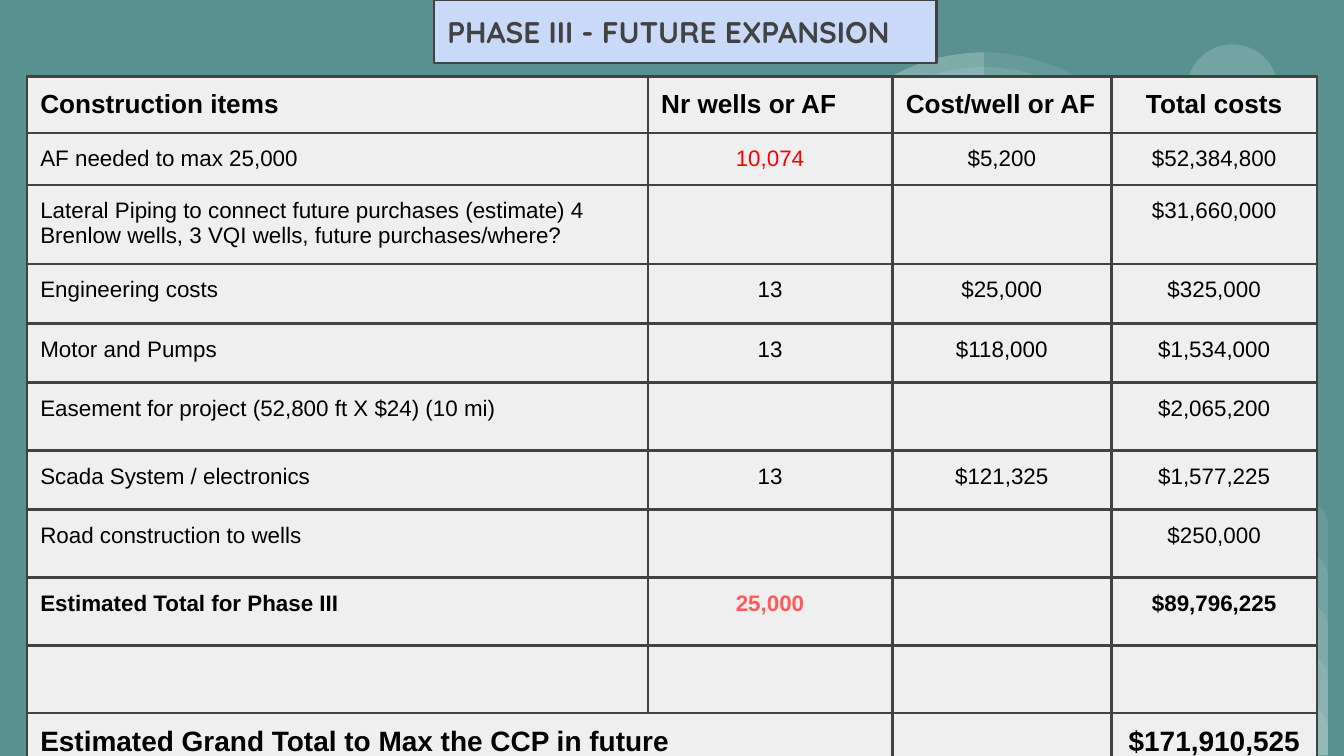
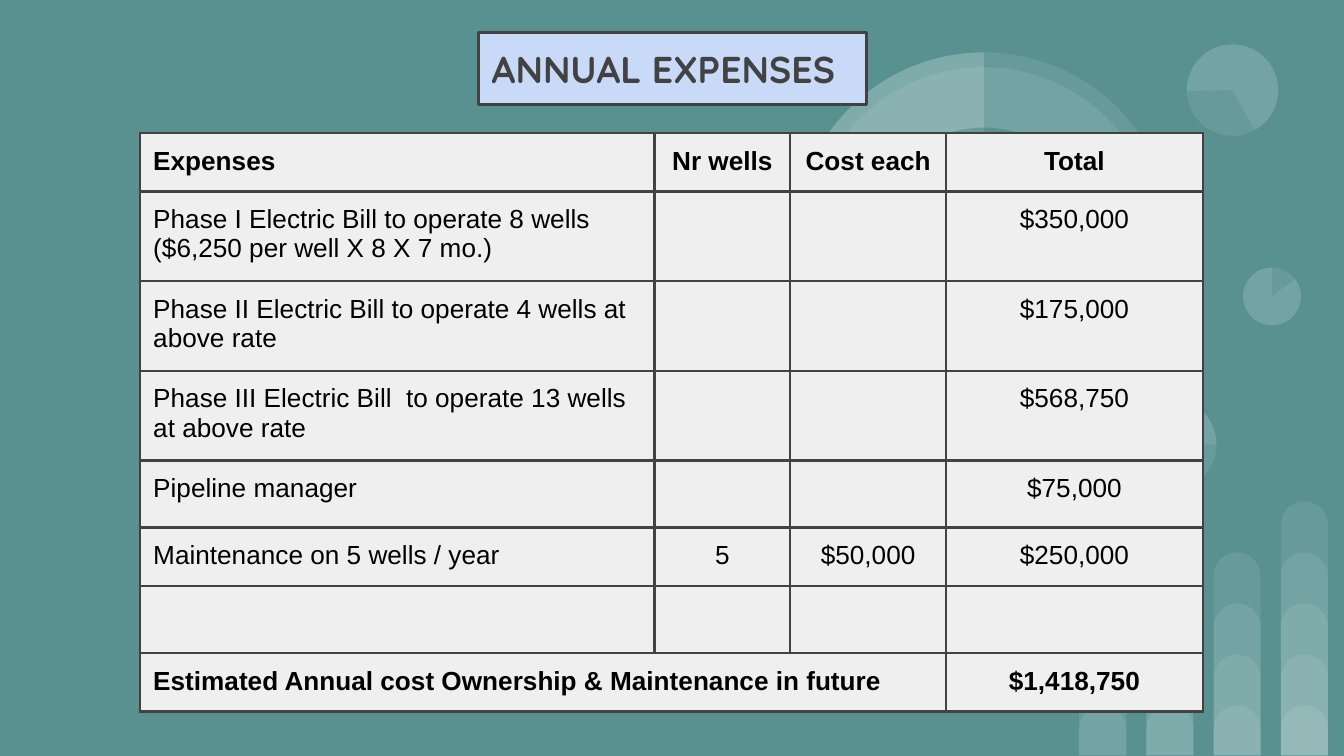
from dataclasses import dataclass

from lxml.etree import SubElement
from pptx import Presentation
from pptx.dml.color import RGBColor
from pptx.enum.shapes import MSO_SHAPE
from pptx.enum.text import MSO_ANCHOR, MSO_AUTO_SIZE, PP_ALIGN
from pptx.oxml.ns import qn
from pptx.util import Inches, Pt

TEAL = "599191"
WHITE = "FFFFFF"
BLACK = "000000"
DARK = "424242"
PALE_BLUE = "C9DAF8"
CELL_GREY = "EFEFEF"
BODY_FONT = "Arial"
TITLE_FONT = "Quicksand"
INSET = 0.1
LINE_PT = 1.5
VEIL_OPACITY = 9


@dataclass
class Row:
    """One table row with its text style; left counts the left-aligned cells."""
    height: float
    cells: tuple
    size: int = 12
    bold: bool = False
    left: int = 1
    span: int = 1
    count_color: str = BLACK


PHASE_COLS = (4.62, 1.82, 1.63, 1.53)
PHASE_ROWS = (
    Row(0.11, ("Construction items", "Nr wells or AF", "Cost/well or AF", "Total costs"),
        size=14, bold=True, left=3),
    Row(0.38, ("AF needed to max 25,000", "10,074", "$5,200", "$52,384,800"),
        count_color="FF0000"),
    Row(0.59, ("Lateral Piping to connect future purchases (estimate) 4 "
               "Brenlow wells, 3 VQI wells, future purchases/where?", "", "", "$31,660,000")),
    Row(0.44, ("Engineering costs", "13", "$25,000", "$325,000")),
    Row(0.44, ("Motor and Pumps", "13", "$118,000", "$1,534,000")),
    Row(0.44, ("Easement for project (52,800 ft X $24) (10 mi)", "", "", "$2,065,200")),
    Row(0.44, ("Scada System / electronics", "13", "$121,325", "$1,577,225")),
    Row(0.45, ("Road construction to wells", "", "", "$250,000")),
    Row(0.36, ("Estimated Total for Phase III", "25,000", "", "$89,796,225"),
        bold=True, count_color="FD5B58"),
    Row(0.11, ("", "", "", "")),
    Row(0.43, ("Estimated Grand Total to Max the CCP in future", "", "", "$171,910,525"),
        size=15, bold=True, span=2),
)

EXPENSE_COLS = (3.83, 1.01, 1.16, 1.91)
EXPENSE_ROWS = (
    Row(0.42, ("Expenses", "Nr wells", "Cost each", "Total"), size=14, bold=True),
    Row(0.42, ("Phase I Electric Bill to operate 8 wells ($6,250 per well X 8 X 7 mo.)",
               "", "", "$350,000"), size=14),
    Row(0.42, ("Phase II Electric Bill to operate 4 wells at above rate",
               "", "", "$175,000"), size=14),
    Row(0.42, ("Phase III Electric Bill  to operate 13 wells at above rate",
               "", "", "$568,750"), size=14),
    Row(0.42, ("Pipeline manager", "", "", "$75,000"), size=14),
    Row(0.42, ("Maintenance on 5 wells / year", "5", "$50,000", "$250,000"), size=14),
    Row(0.42, ("", "", "", "")),
    Row(0.42, ("Estimated Annual cost Ownership & Maintenance in future",
               "", "", "$1,418,750"), size=14, bold=True, span=3),
)


def rgb(value):
    """Turn a hex string into a colour."""
    return RGBColor.from_string(value)


def add_filled(shapes, kind, box, color, opacity=100, rotation=0, adjust=()):
    """Add a preset shape without outline or shadow."""
    sp = shapes.add_shape(kind, *(Inches(v) for v in box))
    sp.shadow.inherit = False
    sp.fill.solid()
    sp.fill.fore_color.rgb = rgb(color)
    sp.line.fill.background()
    sp.rotation = rotation
    for i, value in enumerate(adjust):
        sp.adjustments[i] = value
    if opacity < 100:
        clr = sp.fill._xPr.find(".//" + qn("a:srgbClr"))
        SubElement(clr, qn("a:alpha"), val=str(opacity * 1000))
    return sp


def add_run(tf, text, font, size, color, bold, align=PP_ALIGN.LEFT):
    """Write one styled run into the first paragraph."""
    p = tf.paragraphs[0]
    p.alignment = align
    r = p.add_run()
    r.text = text
    r.font.name = font
    r.font.size = Pt(size)
    r.font.bold = bold
    r.font.color.rgb = rgb(color)


def add_bars(s, left, bottom):
    """Draw the rising columns of overlapping translucent bars."""
    shapes = s.shapes.add_group_shape().shapes
    for col in range(4):
        for level in range(1, col + 3):
            height = 0.38 * level - 0.01
            box = (left + 0.5 * col, bottom - height, 0.35, height)
            add_filled(shapes, MSO_SHAPE.ROUND_2_SAME_RECTANGLE, box, WHITE,
                       VEIL_OPACITY, adjust=(0.5, 0))


def add_pie_chart(shapes, left, top, size, rotation=0, wedges=()):
    """Draw a translucent disc with wedges over it."""
    box = (left, top, size, size)
    add_filled(shapes, MSO_SHAPE.OVAL, box, WHITE, VEIL_OPACITY, rotation)
    for wedge in wedges:
        add_filled(shapes, MSO_SHAPE.PIE, box, WHITE, VEIL_OPACITY, rotation, wedge)


def add_ring(shapes, left, top, size):
    """Draw the large ring chart with its solid centre."""
    def inner(gap):
        return left + gap, top + gap, size - 2 * gap, size - 2 * gap

    add_pie_chart(shapes, left, top, size, wedges=[(88.01, 162)])
    add_filled(shapes, MSO_SHAPE.OVAL, inner(0.11), WHITE, VEIL_OPACITY)
    add_filled(shapes, MSO_SHAPE.OVAL, inner(0.56), TEAL)
    add_filled(shapes, MSO_SHAPE.PIE, inner(0), WHITE, VEIL_OPACITY, adjust=(125.54, 162))


def add_backdrop(s):
    """Place the bars, pies and ring behind the content."""
    add_bars(s, 8.03, 5.62)
    shapes = s.shapes.add_group_shape().shapes
    add_pie_chart(shapes, 9.25, 1.99, 0.43, wedges=[(193.77, 162)])
    add_pie_chart(shapes, 7.08, 3.81, 0.35, 196.2, [(193.77, 162)])
    add_pie_chart(shapes, 8.36, 2.96, 0.69, 90, [(82.45, 162.46)])
    add_pie_chart(shapes, 8.5, 3.09, 0.43, 90)
    add_pie_chart(shapes, 8.83, 0.33, 0.68, 215.9, [(193.77, 123.14)])
    add_ring(shapes, 5.91, 0.39, 2.82)


def add_title(s, box, text, size):
    """Add the outlined title box."""
    sp = add_filled(s.shapes, MSO_SHAPE.RECTANGLE, box, PALE_BLUE)
    sp.line.color.rgb = rgb(DARK)
    sp.line.width = Pt(LINE_PT)
    tf = sp.text_frame
    tf.word_wrap = True
    tf.auto_size = MSO_AUTO_SIZE.SHAPE_TO_FIT_TEXT
    tf.vertical_anchor = MSO_ANCHOR.TOP
    tf.margin_left = tf.margin_right = tf.margin_top = tf.margin_bottom = Inches(INSET)
    add_run(tf, text, TITLE_FONT, size, DARK, True)


def style_cell(cell):
    """Give a cell its borders, fill and margins."""
    tcPr = cell._tc.get_or_add_tcPr()
    for side in ("lnL", "lnR", "lnT", "lnB"):
        ln = SubElement(tcPr, qn("a:" + side), w=str(Pt(LINE_PT)))
        fill = SubElement(ln, qn("a:solidFill"))
        SubElement(fill, qn("a:srgbClr"), val=DARK)
    cell.fill.solid()
    cell.fill.fore_color.rgb = rgb(CELL_GREY)
    cell.margin_left = cell.margin_right = Inches(INSET)
    cell.margin_top = cell.margin_bottom = Inches(INSET)


def add_cost_table(s, left, top, cols, rows):
    """Build a cost table from column widths and rows."""
    height = sum(row.height for row in rows)
    frame = s.shapes.add_table(len(rows), len(cols), Inches(left), Inches(top),
                               Inches(sum(cols)), Inches(height))
    table = frame.table
    table.first_row = table.horz_banding = False
    for column, width in zip(table.columns, cols):
        column.width = Inches(width)
    for y, row in enumerate(rows):
        table.rows[y].height = Inches(row.height)
        for x, text in enumerate(row.cells):
            cell = table.cell(y, x)
            style_cell(cell)
            if text:
                align = PP_ALIGN.LEFT if x < row.left else PP_ALIGN.CENTER
                color = row.count_color if x == 1 else BLACK
                add_run(cell.text_frame, text, BODY_FONT, row.size, color, row.bold, align)
        if row.span > 1:
            table.cell(y, 0).merge(table.cell(y, row.span - 1))


def add_cost_slide(prs, title_box, title, title_size, left, top, cols, rows):
    """Add a slide with backdrop, cost table and title."""
    s = prs.slides.add_slide(prs.slide_layouts[6])
    s.background.fill.solid()
    s.background.fill.fore_color.rgb = rgb(TEAL)
    add_backdrop(s)
    add_cost_table(s, left, top, cols, rows)
    add_title(s, title_box, title, title_size)


def main():
    """Build both slides and save the deck."""
    prs = Presentation()
    prs.slide_width = Inches(10)
    prs.slide_height = Inches(90) // 16
    add_cost_slide(prs, (3.23, 0, 3.74, 0.47), "PHASE III - FUTURE EXPANSION", 16,
                   0.2, 0.57, PHASE_COLS, PHASE_ROWS)
    add_cost_slide(prs, (3.56, 0.24, 2.89, 0.54), "ANNUAL EXPENSES", 20,
                   1.04, 0.99, EXPENSE_COLS, EXPENSE_ROWS)
    prs.save("out.pptx")


if __name__ == "__main__":
    main()
